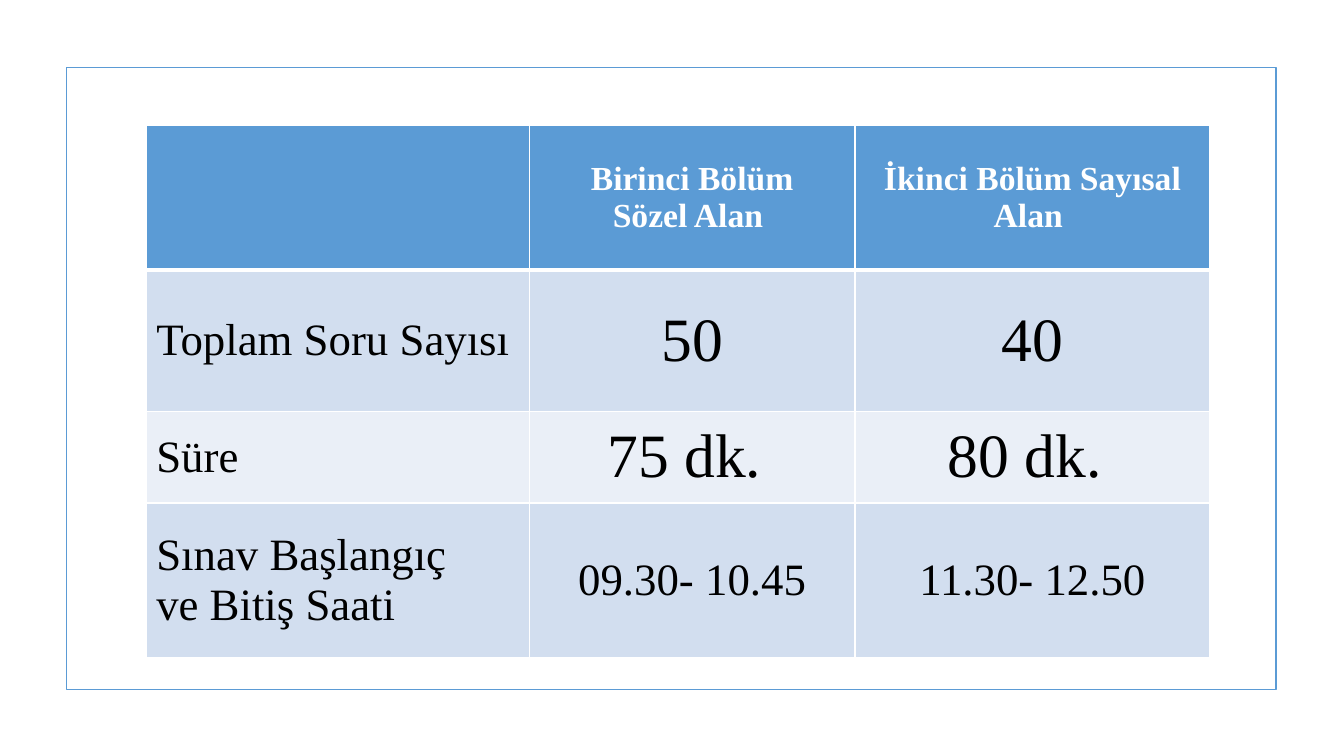
from lxml.etree import SubElement as Sub
from pptx import Presentation as Deck
from pptx.dml.color import RGBColor as Rgb
from pptx.enum.shapes import MSO_SHAPE as Shape
from pptx.enum.text import MSO_ANCHOR as Anchor, PP_ALIGN as Align
from pptx.oxml.ns import qn
from pptx.util import Inches, Pt

HEX = {"blue": "5B9BD5", "band": "D2DEEF", "pale": "EAEFF7",
       "white": "FFFFFF", "black": "000000"}
FONT = "Times New Roman"
WIDE, HIGH = 13.33, 7.5
COLS = [3.8, 3.23, 3.52]
ROWS = [1.44, 1.4, 0.91, 1.53]
HEAD, LABEL, BIG = 24, 32, 44

# Each row: fill, size of the values, then the lines of each cell
GRID = [
    ("blue", HEAD, [[], ["Birinci Bölüm", "Sözel Alan "],
                    ["İkinci Bölüm Sayısal Alan "]]),
    ("band", BIG, [["Toplam Soru Sayısı"], ["50"], ["40"]]),
    ("pale", BIG, [["Süre"], ["75 dk. "], ["80 dk. "]]),
    ("band", LABEL, [["Sınav Başlangıç", "ve Bitiş Saati"],
                     ["09.30- 10.45"], ["11.30- 12.50"]]),
]


def paint(fill, name):
    fill.solid()
    fill.fore_color.rgb = Rgb.from_string(HEX[name])


def add_frame(slide):
    box = [Inches(n) for n in (0.66, 0.67, 12, 6.17)]
    frame = slide.shapes.add_shape(Shape.RECTANGLE, *box)
    frame.shadow.inherit = False
    frame.fill.background()
    frame.line.color.rgb = Rgb.from_string(HEX["blue"])
    frame.line.width = Pt(1.25)


def add_edges(cell, top, base):
    """Draw white borders; top and base are widths in points."""
    props = cell._tc.get_or_add_tcPr()
    for side, width in (("L", 1), ("R", 1), ("T", top), ("B", base)):
        line = Sub(props, qn(f"a:ln{side}"), w=str(Pt(width)))
        fill = Sub(line, qn("a:solidFill"))
        Sub(fill, qn("a:srgbClr"), val=HEX["white"])


def add_text(cell, lines, size, align, head):
    cell.vertical_anchor = Anchor.MIDDLE
    body = cell.text_frame
    for i, text in enumerate(lines):
        para = body.add_paragraph() if i else body.paragraphs[0]
        para.alignment = align
        run = para.add_run()
        run.text = text
        font = run.font
        font.name, font.size, font.bold = FONT, Pt(size), head
        font.color.rgb = Rgb.from_string(HEX["white" if head else "black"])


def add_grid(slide):
    box = [Inches(n) for n in (1.45, 1.24, sum(COLS), sum(ROWS))]
    table = slide.shapes.add_table(len(ROWS), len(COLS), *box).table
    for col, width in zip(table.columns, COLS):
        col.width = Inches(width)
    for row, height in zip(table.rows, ROWS):
        row.height = Inches(height)
    for r, (fill, size, cells) in enumerate(GRID):
        for c, lines in enumerate(cells):
            cell = table.cell(r, c)
            add_edges(cell, 3 if r == 1 else 1, 3 if r == 0 else 1)
            paint(cell.fill, fill)
            add_text(cell, lines, size if c else LABEL,
                     Align.CENTER if c else Align.LEFT, r == 0)


def main():
    deck = Deck()
    deck.slide_width, deck.slide_height = Inches(WIDE), Inches(HIGH)
    slide = deck.slides.add_slide(deck.slide_layouts[6])
    paint(slide.background.fill, "white")
    add_frame(slide)
    add_grid(slide)
    deck.save("out.pptx")


if __name__ == "__main__":
    main()
